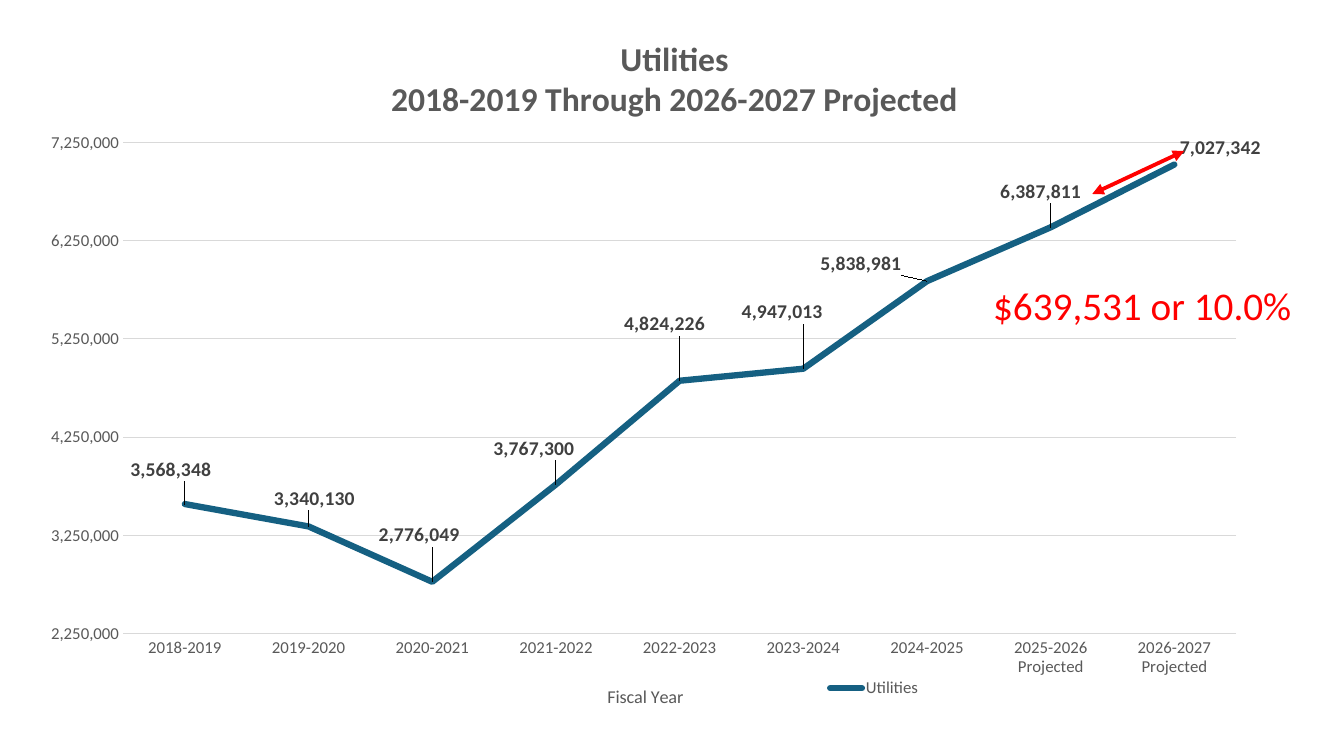
import pptx
import pptx.chart.data
import pptx.dml.color
import pptx.enum.chart
import pptx.enum.shapes
import pptx.enum.text
import pptx.oxml
import pptx.oxml.ns
import pptx.util

EMU_PER_PX = 914400 / 100.8
FONT = "Calibri"
GREY = "595959"
GRID = "D9D9D9"
BLUE = "156082"
RED = "FF0000"
CHART_BOX = (16, 8, 1308, 706)
UTILITIES = [
    ("2018-2019", 3568348, (-14, -19)),
    ("2019-2020", 3340130, (6, -12)),
    ("2020-2021", 2776049, (-13, -31)),
    ("2021-2022", 3767300, (-22, -20)),
    ("2022-2023", 4824226, (-15, -41)),
    ("2023-2024", 4947013, (-21, -41)),
    ("2024-2025", 5838981, (-66, -2)),
    ("2025-2026 Projected", 6387811, (-10, -20)),
    ("2026-2027 Projected", 7027342, (46, -1)),
]


def px(*lengths):
    return [pptx.util.Emu(round(length * EMU_PER_PX)) for length in lengths]


def color(hex_string):
    return pptx.dml.color.RGBColor.from_string(hex_string)


def style_font(font, size, hex_string, bold=False):
    font.name = FONT
    font.size = pptx.util.Pt(size)
    font.bold = bold
    font.color.rgb = color(hex_string)


def style_line(line, hex_string, width):
    line.color.rgb = color(hex_string)
    line.width = pptx.util.Pt(width)


def add_xml(parent, tag, index=None, **attributes):
    element = pptx.oxml.parse_xml(
        f'<{tag} {pptx.oxml.ns.nsdecls(tag.split(":")[0])}/>'
    )
    for name, value in attributes.items():
        element.set(name, value)
    parent.insert(len(parent) if index is None else index, element)
    return element


def place(parent, index, x, y, size=None, inner=False, edge=True):
    for old_layout in parent.findall(pptx.oxml.ns.qn("c:layout")):
        parent.remove(old_layout)
    layout = add_xml(add_xml(parent, "c:layout", index), "c:manualLayout")
    if inner:
        add_xml(layout, "c:layoutTarget", val="inner")
    if edge:
        add_xml(layout, "c:xMode", val="edge")
        add_xml(layout, "c:yMode", val="edge")
    width, height = CHART_BOX[2:]
    add_xml(layout, "c:x", val=str(round(x / width, 4)))
    add_xml(layout, "c:y", val=str(round(y / height, 4)))
    if size:
        add_xml(layout, "c:w", val=str(round(size[0] / width, 4)))
        add_xml(layout, "c:h", val=str(round(size[1] / height, 4)))


def write_title(title, lines, size, bold, x, y):
    frame = title.text_frame
    frame.text = "\n".join(lines)
    for paragraph in frame.paragraphs:
        style_font(paragraph.font, size, GREY, bold)
    place(title._element, 1, x, y)


def style_axes(chart):
    category_axis, value_axis = chart.category_axis, chart.value_axis
    for axis in (category_axis, value_axis):
        axis.major_tick_mark = pptx.enum.chart.XL_TICK_MARK.NONE
        axis.minor_tick_mark = pptx.enum.chart.XL_TICK_MARK.NONE
        style_font(axis.tick_labels.font, 12, GREY)
    style_line(category_axis.format.line, GRID, 0.75)
    write_title(category_axis.axis_title, ["Fiscal Year"], 13, False, 588, 678)
    value_axis.minimum_scale = 2250000
    value_axis.maximum_scale = 7500000
    value_axis.major_unit = 1000000
    value_axis.tick_labels.number_format = "#,##0"
    value_axis.tick_labels.number_format_is_linked = False
    value_axis.format.line.fill.background()
    style_line(value_axis.major_gridlines.format.line, GRID, 0.75)


def style_series(series):
    series.smooth = False
    series.marker.style = pptx.enum.chart.XL_MARKER_STYLE.NONE
    style_line(series.format.line, BLUE, 4.5)
    series.format.line._get_or_add_ln().set("cap", "rnd")
    labels = series.data_labels
    labels.show_value = True
    labels.number_format = "#,##0"
    labels.number_format_is_linked = False
    style_font(labels.font, 14, "404040", True)
    for index, (year, amount, offset) in enumerate(UTILITIES):
        label = series.points[index].data_label
        label.position = pptx.enum.chart.XL_LABEL_POSITION.ABOVE
        style_font(label.font, 14, "404040", True)
        place(label._dLbl, 1, *offset, edge=False)


def add_utilities_chart(slide):
    data = pptx.chart.data.CategoryChartData(number_format="#,##0")
    data.categories = [year for year, amount, offset in UTILITIES]
    data.add_series("Utilities", [amount for year, amount, offset in UTILITIES])
    chart = slide.shapes.add_chart(
        pptx.enum.chart.XL_CHART_TYPE.LINE, *px(*CHART_BOX), data
    ).chart
    style_font(chart.font, 10, "000000")
    chart.plots[0].vary_by_categories = False
    chart.has_title = True
    title_lines = ["Utilities", "2018-2019 Through 2026-2027 Projected"]
    write_title(chart.chart_title, title_lines, 24, True, 372, 27)
    chart.has_legend = True
    chart.legend.position = pptx.enum.chart.XL_LEGEND_POSITION.BOTTOM
    chart.legend.include_in_layout = False
    style_font(chart.legend.font, 12, GREY)
    place(chart.legend._element, 1, 808, 673, (100, 24))
    style_axes(chart)
    style_series(chart.plots[0].series[0])
    place(chart._chartSpace.chart.plotArea, 0, 107, 111, (1113, 519), inner=True)


def add_double_arrow(slide, start, end):
    arrow = slide.shapes.add_connector(
        pptx.enum.shapes.MSO_CONNECTOR.STRAIGHT, *px(*start, *end)
    )
    style_line(arrow.line, RED, 2.75)
    line = arrow.line._get_or_add_ln()
    add_xml(line, "a:headEnd", type="triangle")
    add_xml(line, "a:tailEnd", type="triangle")
    add_xml(arrow._element.spPr, "a:effectLst")


def add_callout(slide, text, box):
    frame = slide.shapes.add_textbox(*px(*box)).text_frame
    frame.word_wrap = False
    frame.auto_size = pptx.enum.text.MSO_AUTO_SIZE.SHAPE_TO_FIT_TEXT
    frame.text = text
    style_font(frame.paragraphs[0].font, 28, RED)


def main():
    presentation = pptx.Presentation()
    presentation.slide_width = pptx.util.Inches(13.33)
    presentation.slide_height = pptx.util.Inches(7.5)
    slide = presentation.slides.add_slide(presentation.slide_layouts[6])
    add_utilities_chart(slide)
    add_double_arrow(slide, (1092, 194), (1184, 151))
    add_callout(slide, "$639,531 or 10.0%", (983, 276, 323, 57))
    presentation.save("out.pptx")


if __name__ == "__main__":
    main()
